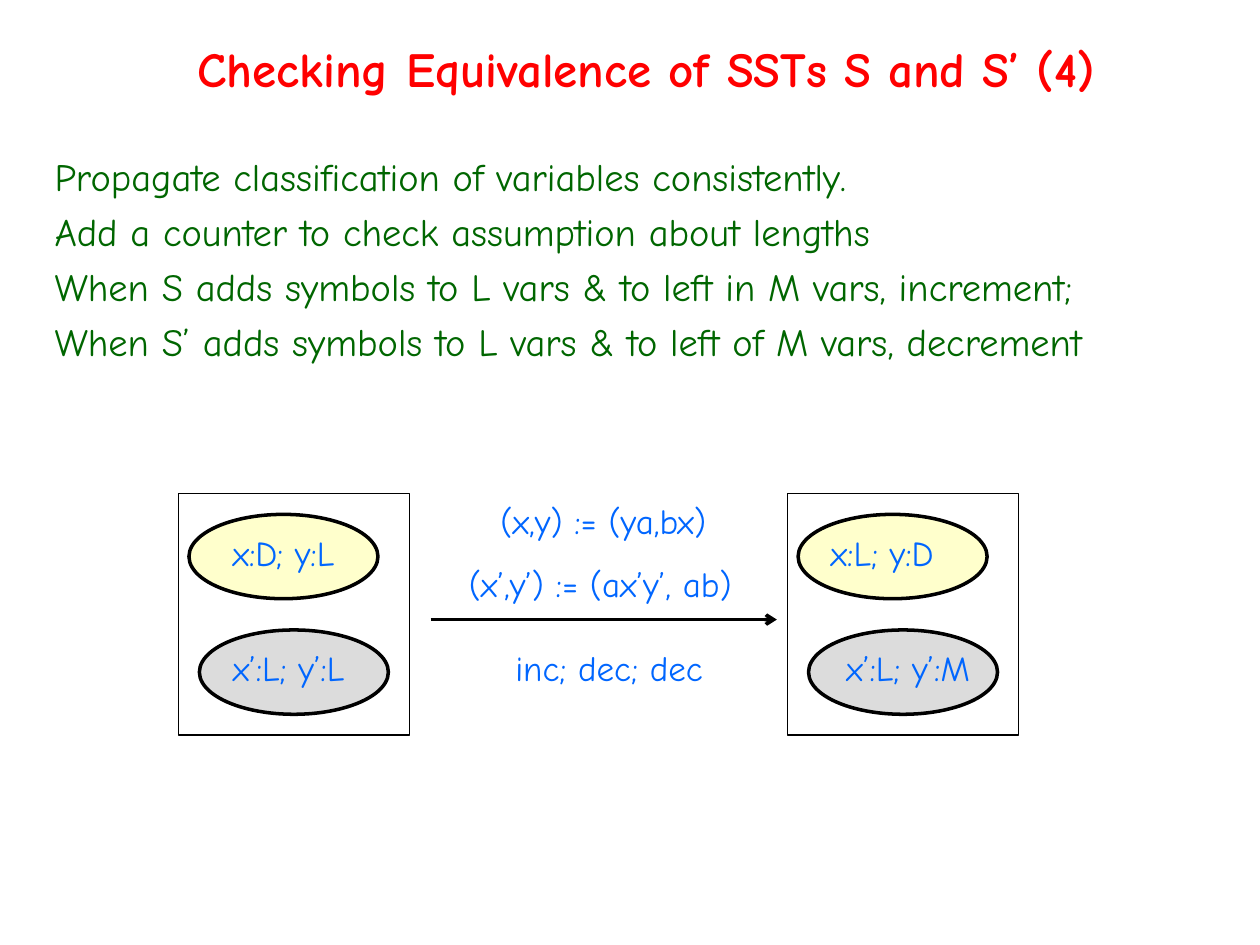
from dataclasses import dataclass

from lxml import etree
from pptx import Presentation
from pptx.dml.color import RGBColor
from pptx.enum.shapes import MSO_CONNECTOR, MSO_SHAPE
from pptx.enum.text import MSO_ANCHOR, PP_ALIGN
from pptx.oxml.ns import qn
from pptx.util import Cm, Pt

STRAIGHT = MSO_CONNECTOR.STRAIGHT
RECTANGLE, OVAL = MSO_SHAPE.RECTANGLE, MSO_SHAPE.OVAL
MIDDLE, TOP = MSO_ANCHOR.MIDDLE, MSO_ANCHOR.TOP
CENTER, LEFT = PP_ALIGN.CENTER, PP_ALIGN.LEFT
TITLE_ONLY = 5


@dataclass(frozen=True)
class Theme:
    font: str = "Comic Neue"
    title: RGBColor = RGBColor(0xFF, 0x00, 0x00)
    body: RGBColor = RGBColor(0x00, 0x66, 0x00)
    label: RGBColor = RGBColor(0x00, 0x66, 0xFF)
    line: RGBColor = RGBColor(0x00, 0x00, 0x00)
    first_fill: RGBColor = RGBColor(0xFF, 0xFF, 0xCC)
    second_fill: RGBColor = RGBColor(0xDC, 0xDC, 0xDC)
    title_size: float = 28
    body_size: float = 22
    label_size: float = 20
    thin: float = 0.75
    thick: float = 2


@dataclass(frozen=True)
class Label:
    text: str
    left: float
    top: float
    width: float
    wrap: bool = True


@dataclass(frozen=True)
class State:
    left: float
    labels: tuple[Label, Label]


THEME = Theme()

# Lengths in cm
FRAME_TOP, FRAME_WIDTH, FRAME_HEIGHT = 9.95, 4.66, 4.87
OVAL_WIDTH, OVAL_HEIGHT = 3.81, 1.7
LABEL_HEIGHT = 1.11
FIRST_ROW, SECOND_ROW = 10.58, 12.91

TITLE = "Checking Equivalence of SSTs S and S’ (4)"
POINTS = (
    "Propagate classification of variables consistently.",
    "Add a counter to check assumption about lengths",
    "When S adds symbols to L vars & to left in M vars, increment;",
    "When S’ adds symbols to L vars & to left of M vars, decrement",
)
STATES = (
    State(3.6, (Label("x:D; y:L", 4.02, FIRST_ROW, 3.39),
                Label("x’:L; y’:L", 3.81, SECOND_ROW, 4.02))),
    State(15.88, (Label("x:L; y:D", 16.09, FIRST_ROW, 3.39),
                  Label("x’:L; y’:M", 16.3, SECOND_ROW, 4.02))),
)
TRANSITION = (
    Label("(x,y) := (ya,bx)", 9.5, 9.95, 5.33, False),
    Label("(x’,y’) := (ax’y’, ab)", 8.89, 11.22, 6.43, False),
    Label("inc; dec; dec", 9.95, SECOND_ROW, 4.66, False),
)


def write(frame, lines: tuple[str, ...], size: float, color: RGBColor,
          frame_format: dict, paragraph_format: dict, bold: bool = False) -> None:
    for name, value in frame_format.items():
        setattr(frame, name, value)
    for number, line in enumerate(lines):
        paragraph = frame.add_paragraph() if number else frame.paragraphs[0]
        for name, value in paragraph_format.items():
            setattr(paragraph, name, value)
        run = paragraph.add_run()
        run.text = line
        font_format = {"name": THEME.font, "size": Pt(size), "bold": bold}
        for name, value in font_format.items():
            setattr(run.font, name, value)
        run.font.color.rgb = color


def draw_title(slide) -> None:
    title = slide.shapes.title
    place = {"left": Cm(0.64), "top": Cm(0.64), "width": Cm(24.77), "height": Cm(1.47)}
    for name, value in place.items():
        setattr(title, name, value)
    write(title.text_frame, (TITLE,), THEME.title_size, THEME.title,
          {"vertical_anchor": MIDDLE, "word_wrap": True}, {"alignment": CENTER}, bold=True)


def draw_points(slide) -> None:
    points = slide.shapes.add_textbox(Cm(0.85), Cm(2.96), Cm(23.5), Cm(4.66))
    write(points.text_frame, POINTS, THEME.body_size, THEME.body,
          {"vertical_anchor": TOP, "word_wrap": True},
          {"alignment": LEFT, "space_before": Pt(5)})


def draw_label(slide, label: Label) -> None:
    box = slide.shapes.add_textbox(Cm(label.left), Cm(label.top),
                                   Cm(label.width), Cm(LABEL_HEIGHT))
    write(box.text_frame, (label.text,), THEME.label_size, THEME.label,
          {"word_wrap": label.wrap}, {"alignment": CENTER})


def draw_outline(slide, kind, left: float, top: float, width: float, height: float,
                 line_width: float, fill: RGBColor | None = None) -> None:
    outline = slide.shapes.add_shape(kind, Cm(left), Cm(top), Cm(width), Cm(height))
    outline.shadow.inherit = False
    if fill is None:
        outline.fill.background()
    else:
        outline.fill.solid()
        outline.fill.fore_color.rgb = fill
    outline.line.color.rgb = THEME.line
    outline.line.width = Pt(line_width)


def draw_state(slide, state: State) -> None:
    draw_outline(slide, RECTANGLE, state.left, FRAME_TOP, FRAME_WIDTH, FRAME_HEIGHT,
                 THEME.thin)
    ovals = ((0.21, 0.42, THEME.first_fill), (0.42, 2.75, THEME.second_fill))
    for across, down, fill in ovals:
        draw_outline(slide, OVAL, state.left + across, FRAME_TOP + down,
                     OVAL_WIDTH, OVAL_HEIGHT, THEME.thick, fill)
    for label in state.labels:
        draw_label(slide, label)


def draw_arrow(slide, start: float, end: float, height: float) -> None:
    arrow = slide.shapes.add_connector(STRAIGHT, Cm(start), Cm(height), Cm(end), Cm(height))
    arrow.line.color.rgb = THEME.line
    arrow.line.width = Pt(THEME.thick)
    properties = arrow.line._get_or_add_ln()
    etree.SubElement(properties, qn("a:tailEnd"), type="arrow")
    etree.SubElement(properties.getparent(), qn("a:effectLst"))


def main() -> None:
    presentation = Presentation()
    presentation.slide_width, presentation.slide_height = Cm(25.4), Cm(19.05)
    slide = presentation.slides.add_slide(presentation.slide_layouts[TITLE_ONLY])

    # Heading and explanation
    draw_title(slide)
    draw_points(slide)

    # Product states before and after the step
    for state in STATES:
        draw_state(slide, state)

    # Transition with its updates and counter changes
    draw_arrow(slide, 8.68, 15.66, 12.49)
    for label in TRANSITION:
        draw_label(slide, label)

    presentation.save("out.pptx")


if __name__ == "__main__":
    main()
